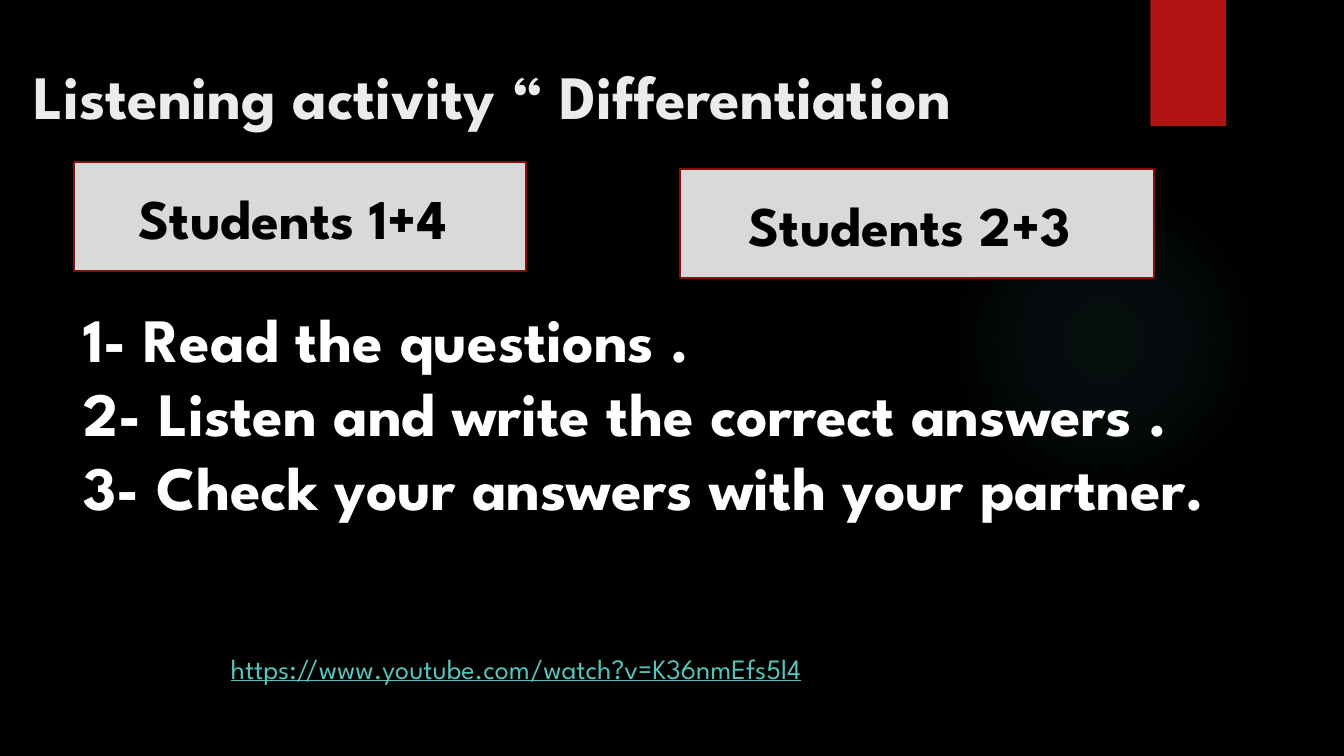
from lxml import etree
from pptx import Presentation
from pptx.dml.color import RGBColor
from pptx.enum.shapes import MSO_SHAPE
from pptx.enum.text import MSO_ANCHOR, PP_ALIGN
from pptx.oxml.ns import qn
from pptx.util import Pt

FONT = "League Spartan"


def color(code):
    return RGBColor.from_string(code)


def add_shape(slide, kind, box, fill, line=None):
    shape = slide.shapes.add_shape(kind, *map(Pt, box))
    shape.shadow.inherit = False
    shape.fill.solid()
    shape.fill.fore_color.rgb = color(fill)
    if line:
        shape.line.color.rgb = color(line)
        shape.line.width = Pt(1.5)
    else:
        shape.line.fill.background()
    return shape


def add_glow(slide, box, code, stops):
    """Draw a circle that fades outwards; stops are (position, opacity) in percent."""
    glow = add_shape(slide, MSO_SHAPE.OVAL, box, code)
    solid = glow.fill._xPr.find(qn("a:solidFill"))
    grad = etree.Element(qn("a:gradFill"), rotWithShape="1")
    items = etree.SubElement(grad, qn("a:gsLst"))
    for place, alpha in stops:
        stop = etree.SubElement(items, qn("a:gs"), pos=str(place * 1000))
        tint = etree.SubElement(stop, qn("a:srgbClr"), val=code)
        etree.SubElement(tint, qn("a:alpha"), val=str(alpha * 1000))
    path = etree.SubElement(grad, qn("a:path"), path="circle")
    etree.SubElement(path, qn("a:fillToRect"), l="50000", t="50000", r="50000", b="50000")
    solid.getparent().replace(solid, grad)


def write(shape, lines, size, code, anchor=MSO_ANCHOR.TOP, align=PP_ALIGN.LEFT,
          bold=True, underline=False):
    frame = shape.text_frame
    frame.word_wrap = True
    frame.vertical_anchor = anchor
    frame.text = "\n".join(lines)
    for para in frame.paragraphs:
        para.alignment = align
        font = para.font
        font.name, font.size = FONT, Pt(size)
        font.bold, font.underline = bold, underline
        font.color.rgb = color(code)


def add_text(slide, box, lines, size, code, **style):
    write(slide.shapes.add_textbox(*map(Pt, box)), lines, size, code, **style)


def add_label(slide, box, text):
    label = add_shape(slide, MSO_SHAPE.RECTANGLE, box, "D9D9D9", "82100E")
    write(label, [text], 40, "000000", MSO_ANCHOR.MIDDLE, PP_ALIGN.CENTER)


def main():
    deck = Presentation()
    deck.slide_width, deck.slide_height = Pt(960), Pt(540)
    slide = deck.slides.add_slide(deck.slide_layouts[6])
    back = slide.background.fill
    back.solid()
    back.fore_color.rgb = color("000000")

    add_glow(slide, (677.5, 131.8, 221.8, 221.8), "50B9C1", [(0, 7), (36, 6), (69, 0)])
    add_shape(slide, MSO_SHAPE.RECTANGLE, (821.8, 0, 54, 90), "B01513")
    add_text(slide, (16.6, 13.7, 818.6, 84), ["Listening activity “ Differentiation"],
             44, "EBEBEB", anchor=MSO_ANCHOR.BOTTOM)
    add_text(slide, (157.7, 461.5, 677.5, 47.5),
             ["https://www.youtube.com/watch?v=K36nmEfs5l4"],
             20, "58C1BA", bold=False, underline=True)
    add_label(slide, (52.8, 115.9, 323, 77.8), "Students 1+4 ")
    add_label(slide, (486, 121, 338.4, 77.8), "Students 2+3 ")
    add_text(slide, (52.8, 211.7, 852.5, 220.3),
             ["1- Read the questions .",
              "2- Listen and write the correct answers .",
              "3- Check your answers with your partner."], 44, "FFFFFF")
    deck.save("out.pptx")


if __name__ == "__main__":
    main()
